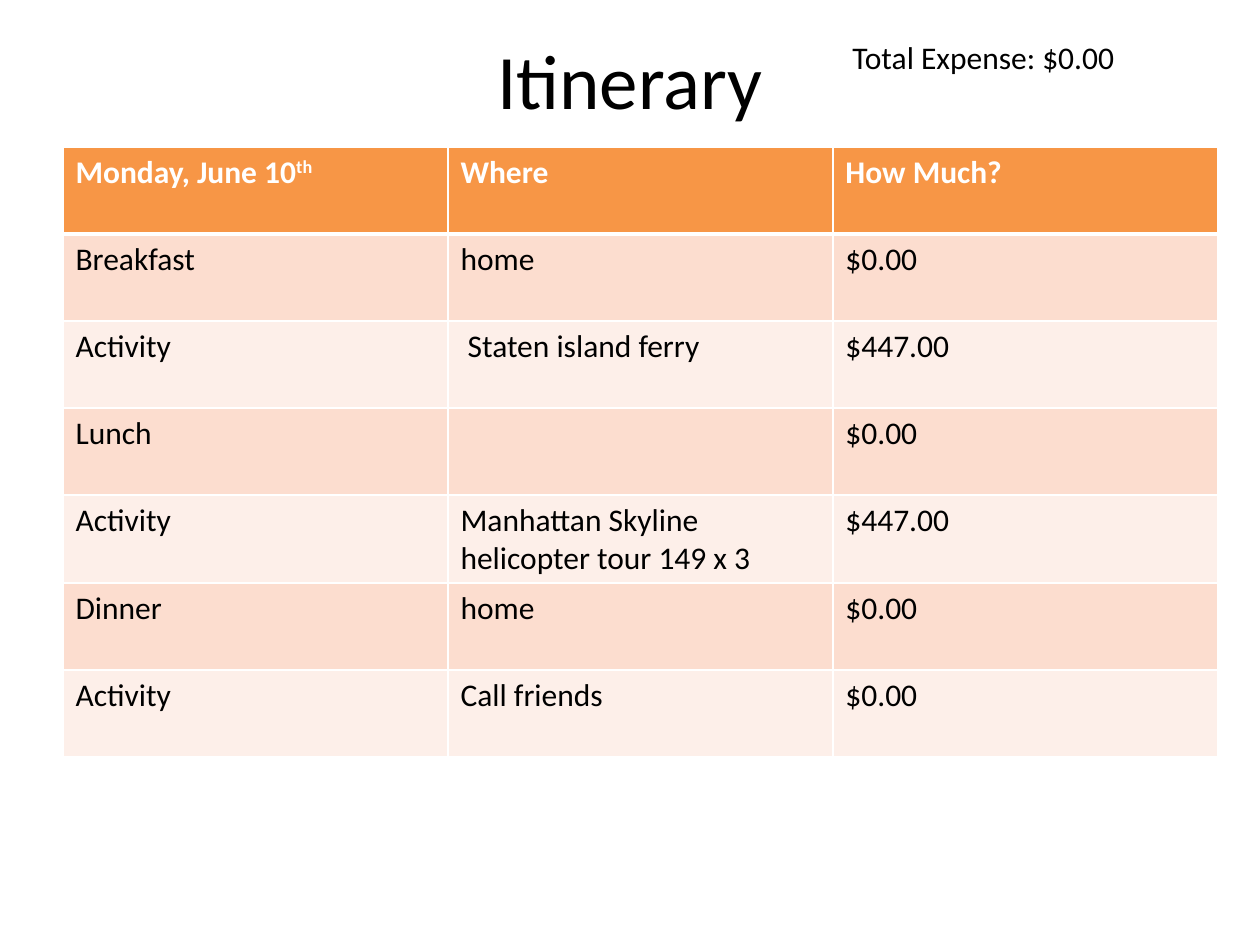
from lxml.etree import SubElement
from pptx import Presentation
from pptx.dml.color import RGBColor
from pptx.enum.text import MSO_ANCHOR, PP_ALIGN
from pptx.oxml.ns import qn
from pptx.util import Pt

# Content: a text is a string or a list of (text, baseline in thousandths)
TITLE = "Itinerary"
TOTAL = "Total Expense: $0.00"
HEADER = [[("Monday, June 10", 0), ("th", 30000)], "Where", "How Much?"]
ROWS = [
    ["Breakfast", "home", "$0.00"],
    ["Activity", " Staten island ferry", "$447.00"],
    ["Lunch", "", "$0.00"],
    ["Activity", "Manhattan Skyline helicopter tour 149 x 3", "$447.00"],
    ["Dinner", "home", "$0.00"],
    ["Activity", "Call friends", "$0.00"],
]

# Layout in px and colours
EMU_PER_PX = 914400 // 126
SLIDE_SIZE = (1260, 945)
TITLE_BOX = (63, 0, 1134, 158)
TOTAL_BOX = (840, 32, 388, 50)
TABLE_LEFT, TABLE_TOP = 63, 147
COLUMN_WIDTH, ROW_HEIGHT = 385, 87
BLACK, WHITE = "000000", "FFFFFF"
HEADER_FILL = "F79646"
BAND_FILLS = ["FCDDCF", "FDEFE9"]


def px(length):
    return length * EMU_PER_PX


def color(value):
    return RGBColor.from_string(value)


def write_text(frame, text, size=18, fill=BLACK, bold=False, align=PP_ALIGN.LEFT):
    frame.word_wrap = True
    paragraph = frame.paragraphs[0]
    paragraph.alignment = align
    pieces = [(text, 0)] if isinstance(text, str) else text
    for piece, baseline in pieces:
        if not piece:
            continue
        run = paragraph.add_run()
        run.text = piece
        run.font.name = "Calibri"
        run.font.size = Pt(size)
        run.font.bold = bold
        run.font.color.rgb = color(fill)
        if baseline:
            run.font._element.set("baseline", str(baseline))


def add_text(slide, box, text, anchor=MSO_ANCHOR.TOP, **text_format):
    frame = slide.shapes.add_textbox(*map(px, box)).text_frame
    frame.vertical_anchor = anchor
    write_text(frame, text, **text_format)


def set_borders(cell, top=1, bottom=1):
    properties = cell._tc.get_or_add_tcPr()
    for side, width in (("L", 1), ("R", 1), ("T", top), ("B", bottom)):
        line = SubElement(properties, qn(f"a:ln{side}"), w=str(Pt(width)))
        solid = SubElement(line, qn("a:solidFill"))
        SubElement(solid, qn("a:srgbClr"), val=WHITE)


def add_itinerary(slide):
    rows = [HEADER] + ROWS
    table = slide.shapes.add_table(
        len(rows), len(HEADER), px(TABLE_LEFT), px(TABLE_TOP),
        px(COLUMN_WIDTH * len(HEADER)), px(ROW_HEIGHT * len(rows))).table
    for column in table.columns:
        column.width = px(COLUMN_WIDTH)
    for r, texts in enumerate(rows):
        table.rows[r].height = px(ROW_HEIGHT)
        is_header = r == 0
        fill = HEADER_FILL if is_header else BAND_FILLS[(r - 1) % 2]
        for c, text in enumerate(texts):
            cell = table.cell(r, c)
            # A thick rule separates the header from the first row
            set_borders(cell, top=3 if r == 1 else 1, bottom=3 if is_header else 1)
            cell.fill.solid()
            cell.fill.fore_color.rgb = color(fill)
            write_text(cell.text_frame, text, bold=is_header,
                       fill=WHITE if is_header else BLACK)


def main():
    presentation = Presentation()
    presentation.slide_width, presentation.slide_height = map(px, SLIDE_SIZE)
    slide = presentation.slides.add_slide(presentation.slide_layouts[6])

    # Title, total and table
    add_text(slide, TITLE_BOX, TITLE, anchor=MSO_ANCHOR.MIDDLE, size=44,
             align=PP_ALIGN.CENTER)
    add_text(slide, TOTAL_BOX, TOTAL)
    add_itinerary(slide)
    presentation.save("out.pptx")


if __name__ == "__main__":
    main()
